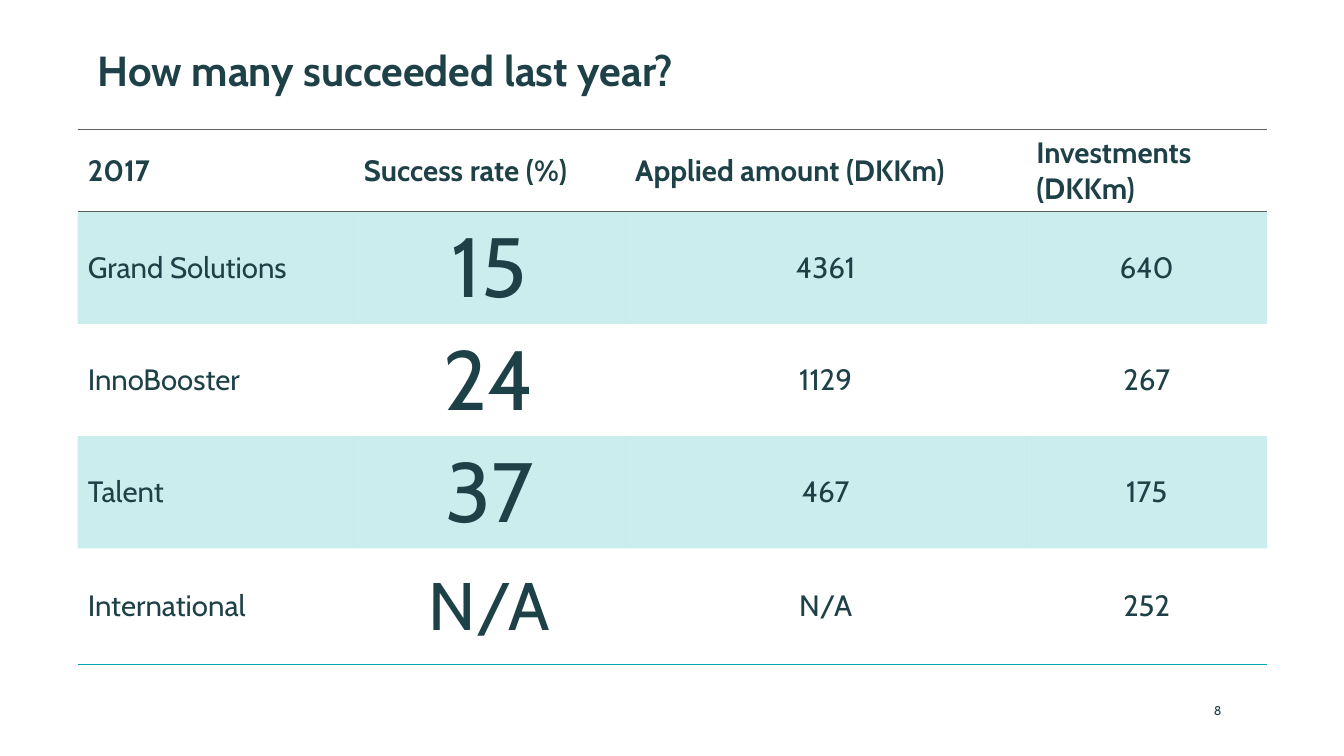
from lxml import etree
from pptx import Presentation
from pptx.dml.color import RGBColor
from pptx.enum.text import MSO_ANCHOR, MSO_AUTO_SIZE, PP_ALIGN
from pptx.oxml.ns import qn
from pptx.util import Inches, Pt

LEFT, CENTER = PP_ALIGN.LEFT, PP_ALIGN.CENTER
TOP, MIDDLE = MSO_ANCHOR.TOP, MSO_ANCHOR.MIDDLE
FIXED_SIZE = MSO_AUTO_SIZE.NONE

COLORS = {"ink": "1E4148", "teal": "00A6AA", "rule": "606060"}
FONT = "Cabin"
TITLE_ONLY = 5
PLAIN_TABLE = "{2D5ABB26-0587-4C30-8999-92F81FD0307C}"

# Table content and proportions, in percent of the slide
HEADINGS = ["2017", "Success rate (%)", "Applied amount (DKKm)", "Investments (DKKm)"]
PROGRAMMES = [
    ["Grand Solutions", "15", "4361", "640"],
    ["InnoBooster", "24", "1129", "267"],
    ["Talent", "37", "467", "175"],
    ["International", "N/A", "N/A", "252"],
]
COLUMN_WIDTHS = [20.55, 20.18, 29.85, 17.93]
ROW_HEIGHTS = [9.47, 14.8, 14.8, 14.8, 15.33]


def write(frame, text, size=21, bold=False, align=LEFT, anchor=MIDDLE):
    """Put one formatted paragraph into a text frame."""
    frame.word_wrap = True
    frame.vertical_anchor = anchor
    para = frame.paragraphs[0]
    para.alignment = align
    span = para.add_run()
    span.text = text
    span.font.name = FONT
    span.font.size = Pt(size)
    span.font.bold = bold
    span.font.color.rgb = RGBColor.from_string(COLORS["ink"])


class SlideBuilder:
    """Places elements on a grid of 100 columns by 100 rows."""

    def __init__(self, deck):
        self.column = deck.slide_width / 100
        self.row = deck.slide_height / 100
        self.page = deck.slides.add_slide(deck.slide_layouts[TITLE_ONLY])

    def place(self, left, top, width, height):
        return (round(left * self.column), round(top * self.row),
                round(width * self.column), round(height * self.row))

    def title(self, text, *area):
        box = self.page.shapes.title
        box.left, box.top, box.width, box.height = self.place(*area)
        box.text_frame.auto_size = FIXED_SIZE
        write(box.text_frame, text, size=30, bold=True, anchor=TOP)

    def page_number(self, text, *area):
        frame = self.page.shapes.add_textbox(*self.place(*area)).text_frame
        frame.margin_left = frame.margin_right = 0
        frame.margin_top = frame.margin_bottom = 0
        write(frame, text, size=9)

    def tint(self, cell, color, percent):
        cell.fill.solid()
        cell.fill.fore_color.rgb = RGBColor.from_string(COLORS[color])
        shade = cell._tc.tcPr.find(".//" + qn("a:srgbClr"))
        etree.SubElement(shade, qn("a:alpha"), val=str(percent * 1000))

    def border(self, cell, side, color, width):
        line = etree.Element(qn("a:ln" + side), w=str(Pt(width)))
        fill = etree.SubElement(line, qn("a:solidFill"))
        etree.SubElement(fill, qn("a:srgbClr"), val=COLORS[color])
        cell._tc.get_or_add_tcPr().insert(0, line)

    def table(self, rows, left, top):
        area = self.place(left, top, sum(COLUMN_WIDTHS), sum(ROW_HEIGHTS))
        grid = self.page.shapes.add_table(len(rows), len(rows[0]), *area).table
        grid._tbl.tblPr.find(qn("a:tableStyleId")).text = PLAIN_TABLE
        for column, width in zip(grid.columns, COLUMN_WIDTHS):
            column.width = round(width * self.column)
        for row, height in zip(grid.rows, ROW_HEIGHTS):
            row.height = round(height * self.row)
        for r, values in enumerate(rows):
            for c, value in enumerate(values):
                self.table_cell(grid.cell(r, c), value, r, c, len(rows) - 1)

    def table_cell(self, cell, value, r, c, last):
        header = r == 0
        size = 21
        if c == 1 and not header:  # success rates stand out
            size = 60 if value.isdigit() else 48
        align = LEFT if header or c == 0 else CENTER
        write(cell.text_frame, value, size=size, bold=header, align=align)
        cell.vertical_anchor = MIDDLE
        if r % 2:
            self.tint(cell, "teal", 20)
        else:
            cell.fill.background()
        if header:
            self.border(cell, "B", "rule", 0.5)
            self.border(cell, "T", "rule", 0.5)
        elif r == last:
            self.border(cell, "B", "teal", 1)


def main():
    deck = Presentation()
    deck.slide_width, deck.slide_height = Inches(13.33), Inches(7.5)
    slide = SlideBuilder(deck)
    slide.table([HEADINGS] + PROGRAMMES, 5.78, 17.17)
    slide.page_number("8", 90.32, 91.33, 3.23, 5.33)
    slide.title("How many succeeded last year?", 6.53, 5.2, 87.1, 6.8)
    deck.save("out.pptx")


if __name__ == "__main__":
    main()
